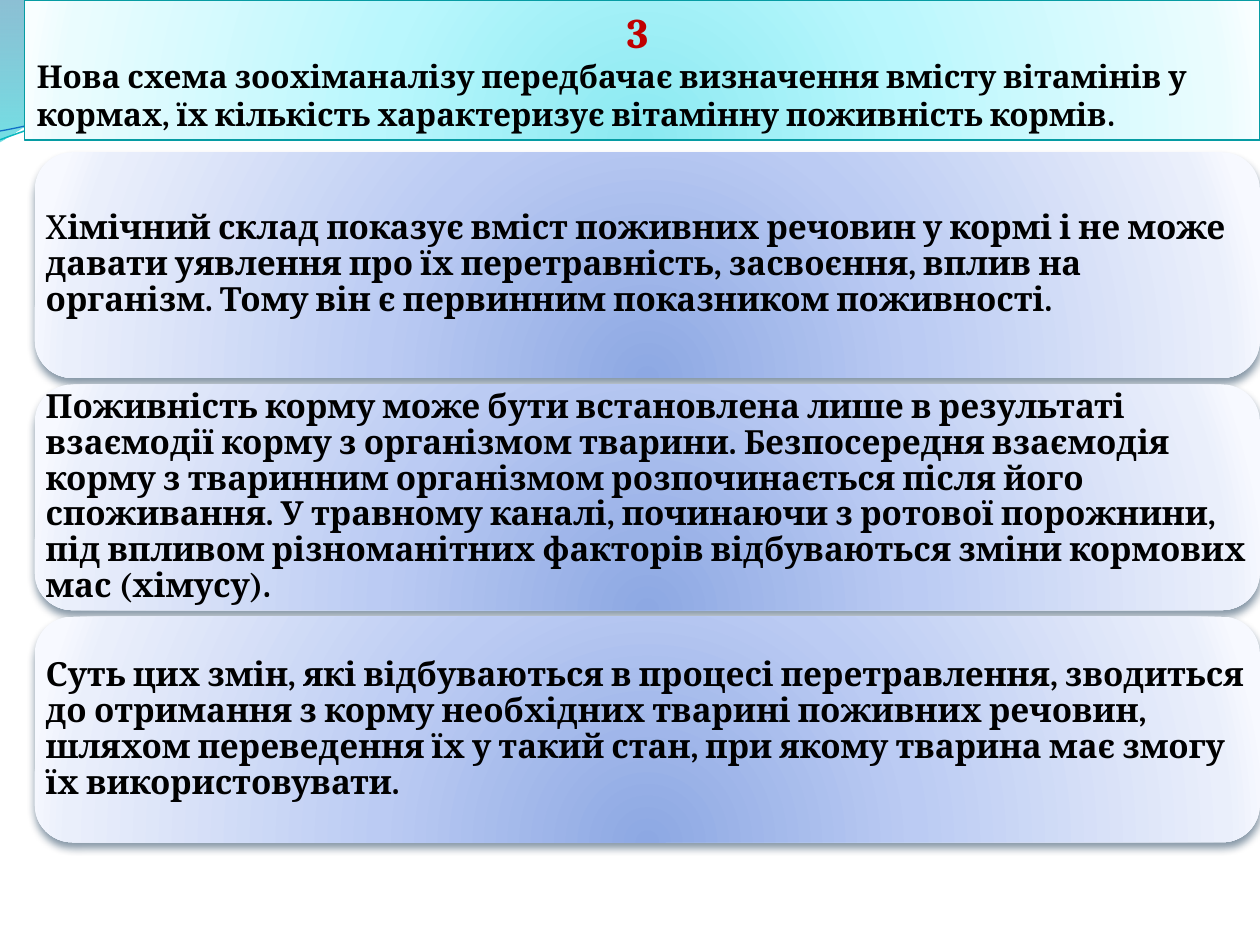
from lxml import etree
from pptx import Presentation, util as u
from pptx.enum import shapes, text
from pptx.dml.color import RGBColor
from pptx.oxml import parse_xml
from pptx.oxml.ns import nsdecls, qn

INCH = 2.54
FONT = "Cambria"
HEX = {"ink": "000000", "red": "C00000", "edge": "069CA3",
       "teal": "0AB8BF", "blue": "0F6FC6", "shade": "042747"}
RADIAL = ('<a:path path="circle">'
          '<a:fillToRect l="50000" t="130000" r="50000" b="-30000"/></a:path>')
DOWN = '<a:lin ang="5400000" scaled="0"/>'


def blend(shape, stops, way):
    """Gradient fill from (position, colour, opacity) stops; needs a set line."""
    marks = "".join(
        f'<a:gs pos="{pos * 1000}"><a:srgbClr val="{tone}">'
        f'<a:alpha val="{part * 1000}"/></a:srgbClr></a:gs>'
        for pos, tone, part in stops)
    grad = parse_xml(f'<a:gradFill {nsdecls("a")} rotWithShape="1">'
                     f'<a:gsLst>{marks}</a:gsLst>{way}</a:gradFill>')
    shape.element.spPr.find(qn("a:ln")).addprevious(grad)


def bend(shape, parts):
    """Turn each run of three straight steps that stands for a curve into one."""
    steps = iter(list(shape.element.spPr.iter(qn("a:lnTo"))))
    for part in parts:
        first = next(steps)
        if len(part) == 2:
            continue
        curve = etree.Element(qn("a:cubicBezTo"))
        first.addprevious(curve)
        for step in (first, next(steps), next(steps)):
            curve.append(step[0])
            step.getparent().remove(step)


deck = Presentation()
deck.slide_width, deck.slide_height = u.Cm(25.4), u.Cm(19.05)
page = deck.slides.add_slide(deck.slide_layouts[5])

# Waves: a start point, then straight (2 numbers) or curved (6 numbers) parts,
# in inches
fills = [
    ((0, 0),
     [(4.4, -0.01), (4.76, 0.17, 6.64, 0.63, 7.58, 0.63),
      (8.53, 0.63, 9.58, 0.26, 10, 0.09), (10.01, 0.36),
      (9.83, 0.44, 8.7, 0.76, 7.46, 0.75), (6.22, 0.75, 3.82, 0.28, 2.57, 0.34),
      (1.29, 0.36, 0.46, 0.83, -0.01, 1.13)],
     [(0, "0074A1", 45), (100, "00C6CF", 55)]),
    ((4.79, -0.01),
     [(5.09, 0.11, 6.82, 0.62, 7.69, 0.65), (8.56, 0.69, 9.61, 0.32, 10, 0.21),
      (10, 0)],
     [(0, "00A1A9", 30), (80, "008BBF", 45)]),
]
lines = [
    ((0, 1.11),
     [(0.48, 0.93, 1.58, 0.57, 2.77, 0.52), (3.95, 0.47, 5.93, 0.89, 7.13, 0.8),
      (8.33, 0.71, 9.38, 0.15, 9.98, -0.02)], ("teal", 0.85)),
    ((0, 1.04),
     [(0.47, 0.96, 1.64, 0.61, 2.83, 0.56), (4.03, 0.51, 5.97, 0.84, 7.17, 0.75),
      (8.36, 0.67, 9.41, 0.21, 10, 0.06)], ("blue", 0.75)),
]
for start, parts, look in fills + lines:
    solid = isinstance(look, list)
    flat = [u.Cm(n * INCH) for part in parts for n in part]
    pen = page.shapes.build_freeform(*(u.Cm(n * INCH) for n in start))
    pen.add_line_segments(list(zip(flat[::2], flat[1::2])), close=solid)
    wave = pen.convert_to_shape()
    bend(wave, parts)
    wave.shadow.inherit = False
    if solid:
        wave.line.fill.background()
        blend(wave, look, DOWN)
    else:
        wave.fill.background()
        wave.line.color.rgb = RGBColor.from_string(HEX[look[0]])
        wave.line.width = u.Pt(look[1])

# Heading, in front of the waves
head = page.shapes.title
page.shapes.element.append(head.element)
head.left, head.top = u.Cm(0.49), u.Cm(0)
head.width, head.height = u.Cm(24.91), u.Cm(2.82)
head.line.color.rgb = RGBColor.from_string(HEX["edge"])
head.line.width = u.Pt(0.75)
blend(head, [(0, "8BE9F1", 100), (43, "B9F7FD", 100),
             (93, "EAFCFE", 100), (100, "F8FEFF", 100)], RADIAL)
frame = head.text_frame
frame.word_wrap = True
frame.auto_size = text.MSO_AUTO_SIZE.SHAPE_TO_FIT_TEXT
frame.vertical_anchor = text.MSO_ANCHOR.TOP
rows = [
    ("3 ", 24, "red", text.PP_ALIGN.CENTER),
    ("Нова схема зоохіманалізу передбачає визначення вмісту вітамінів у кормах, "
     "їх кількість характеризує вітамінну поживність кормів.",
     18, "ink", text.PP_ALIGN.LEFT),
]
for i, (words, size, tone, side) in enumerate(rows):
    para = frame.add_paragraph() if i else frame.paragraphs[0]
    para.alignment = side
    run = para.add_run()
    run.text = words
    run.font.name, run.font.size, run.font.bold = FONT, u.Pt(size), True
    run.font.color.rgb = RGBColor.from_string(HEX[tone])

# Cards: runs of (words, bold)
cards = [
    [("Х", False),
     ("імічний склад показує вміст поживних речовин у кормі і не може давати "
      "уявлення про їх перетравність, засвоєння, вплив на організм. Тому він є "
      "первинним показником поживності.", True)],
    [("Поживність корму може бути встановлена лише в результаті взаємодії корму "
      "з організмом тварини. Безпосередня взаємодія корму з тваринним організмом "
      "розпочинається після його споживання. У травному каналі, починаючи з "
      "ротової порожнини, під впливом різноманітних факторів відбуваються зміни "
      "кормових мас (хімусу).", True)],
    [("Суть цих змін, які відбуваються в процесі перетравлення, зводиться до "
      "отримання з корму необхідних тварині поживних речовин, шляхом переведення "
      "їх у такий стан, при якому тварина має змогу їх використовувати.", True)],
]
for i, runs in enumerate(cards):
    card = page.shapes.add_shape(
        shapes.MSO_SHAPE.ROUNDED_RECTANGLE,
        u.Cm(0.7), u.Cm(3.07 + 4.68 * i), u.Cm(24.7), u.Cm(4.55))
    card.line.fill.background()
    blend(card, [(0, "8DA8E3", 100), (43, "BBCBF3", 100),
                 (93, "EAEFFB", 100), (100, "F7F9FF", 100)], RADIAL)
    card.shadow.inherit = False
    drop = etree.SubElement(
        card.element.spPr.find(qn("a:effectLst")), qn("a:outerShdw"),
        blurRad=str(u.Pt(4.5)), dist=str(u.Pt(3)), dir="5400000", rotWithShape="0")
    hue = etree.SubElement(drop, qn("a:srgbClr"), val=HEX["shade"])
    etree.SubElement(hue, qn("a:alpha"), val="48000")
    frame = card.text_frame
    frame.word_wrap = True
    frame.vertical_anchor = text.MSO_ANCHOR.MIDDLE
    frame.margin_left = frame.margin_right = 0
    frame.margin_top = frame.margin_bottom = 0
    para = frame.paragraphs[0]
    para.alignment = text.PP_ALIGN.LEFT
    para.line_spacing = 0.9
    for words, bold in runs:
        run = para.add_run()
        run.text = words
        run.font.name, run.font.size, run.font.bold = FONT, u.Pt(19), bold
        run.font.color.rgb = RGBColor.from_string(HEX["ink"])

deck.save("out.pptx")
